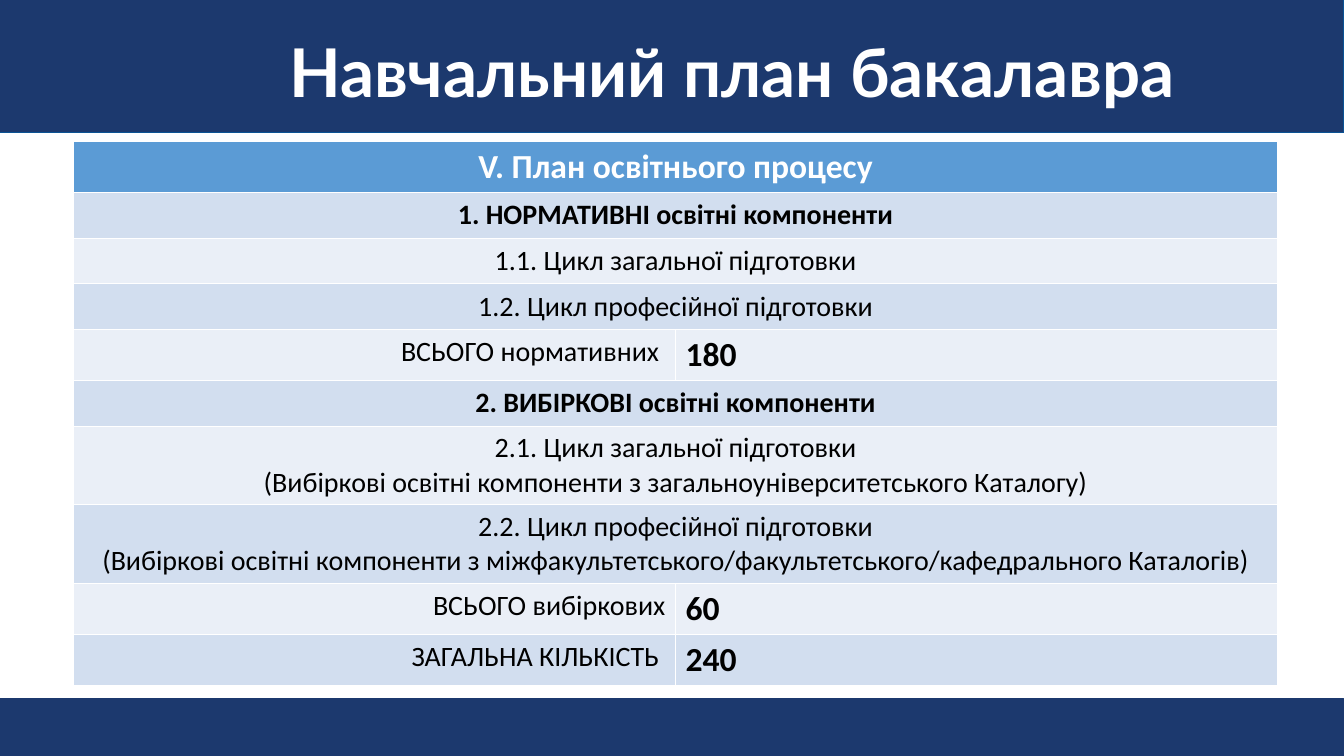
import pptx
import pptx.util
import pptx.dml.color
import pptx.enum.shapes
import pptx.enum.text
import lxml.etree

Pt = pptx.util.Pt
RGBColor = pptx.dml.color.RGBColor
ALIGN = pptx.enum.text.PP_ALIGN
ANCHOR = pptx.enum.text.MSO_ANCHOR

NAVY = RGBColor(0x1C, 0x39, 0x6E)
BAND_EDGE = RGBColor(0x0B, 0x53, 0x94)
HEADER_BLUE = RGBColor(0x5B, 0x9B, 0xD5)
ROW_TINTS = [RGBColor(0xEA, 0xEF, 0xF7), RGBColor(0xD2, 0xDE, 0xEF)]
WHITE = RGBColor(0xFF, 0xFF, 0xFF)
BLACK = RGBColor(0, 0, 0)

# Content: one-part rows span the table, two-part rows are totals
TITLE = "Навчальний план бакалавра"
HEADER = "V. План освітнього процесу"
SECTIONS = ("1. НОРМАТИВНІ освітні компоненти", "2. ВИБІРКОВІ освітні компоненти")
PLAN = [
    (HEADER,),
    (SECTIONS[0],),
    ("1.1. Цикл загальної підготовки",),
    ("1.2. Цикл професійної підготовки",),
    ("ВСЬОГО нормативних", "180"),
    (SECTIONS[1],),
    ("2.1. Цикл загальної підготовки\n"
     "(Вибіркові освітні компоненти з загальноуніверситетського Каталогу)",),
    ("2.2. Цикл професійної підготовки\n"
     "(Вибіркові освітні компоненти з "
     "міжфакультетського/факультетського/кафедрального Каталогів)",),
    ("ВСЬОГО вибіркових", "60"),
    ("ЗАГАЛЬНА КІЛЬКІСТЬ", "240"),
]
INDENTED_TOTALS = ("ВСЬОГО нормативних", "ЗАГАЛЬНА КІЛЬКІСТЬ")
BANDS = [(-1.5, 96.5, BAND_EDGE), (499, 41, NAVY)]  # top, height, edge

# Layout
SLIDE_W, SLIDE_H = 960, 540
TABLE_LEFT, TABLE_TOP, COLUMN_W = 52.6, 101, 430
ROW_H, TALL_ROW_H = 32.6, 56

presentation = pptx.Presentation()
presentation.slide_width, presentation.slide_height = Pt(SLIDE_W), Pt(SLIDE_H)
slide = presentation.slides.add_slide(presentation.slide_layouts[5])

# Navy bands behind the title
for top, height, edge in BANDS:
    band = slide.shapes.add_shape(pptx.enum.shapes.MSO_SHAPE.RECTANGLE,
                                  Pt(-2), Pt(top), Pt(SLIDE_W + 2), Pt(height))
    band.shadow.inherit = False
    band.fill.solid()
    band.fill.fore_color.rgb = NAVY
    band.line.color.rgb = edge
    band.line.width = Pt(0.75)
    slide.shapes._spTree.insert(2, band._element)

# Title
title = slide.shapes.title
title.left, title.top, title.width, title.height = Pt(76), Pt(19), Pt(894), Pt(152)
frame = title.text_frame
frame.margin_left = frame.margin_right = frame.margin_top = frame.margin_bottom = Pt(9.4)
frame.vertical_anchor = ANCHOR.TOP
frame.word_wrap = True
frame.auto_size = pptx.enum.text.MSO_AUTO_SIZE.NONE
heading = frame.paragraphs[0]
heading.text = TITLE
heading.alignment = ALIGN.CENTER
heading.line_spacing = 0.9
font = heading.font
font.name, font.size, font.bold = "Lato", Pt(48), True
font.color.rgb = WHITE

# Soft shadow under the title letters
run_properties = heading.runs[0]._r.get_or_add_rPr()
run_properties.append(lxml.etree.fromstring(
    '<a:effectLst xmlns:a="http://schemas.openxmlformats.org/drawingml/2006/main">'
    '<a:outerShdw blurRad="38100" dist="38100" dir="2700000" algn="tl">'
    '<a:srgbClr val="000000"><a:alpha val="43000"/></a:srgbClr>'
    '</a:outerShdw></a:effectLst>'))


def write(cell, text, size, bold, color, align, anchor):
    cell.vertical_anchor = anchor
    paragraph = cell.text_frame.paragraphs[0]
    paragraph.text = text
    paragraph.alignment = align
    font = paragraph.font
    font.name, font.size, font.bold = "Calibri", Pt(size), bold
    font.color.rgb = color


# Study plan table
row_heights = [TALL_ROW_H if "\n" in row[0] else ROW_H for row in PLAN]
plan = slide.shapes.add_table(len(PLAN), 2, Pt(TABLE_LEFT), Pt(TABLE_TOP),
                              Pt(2 * COLUMN_W), Pt(sum(row_heights))).table
for column in plan.columns:
    column.width = Pt(COLUMN_W)

for index, (row, height) in enumerate(zip(PLAN, row_heights)):
    plan.rows[index].height = Pt(height)
    label, value = plan.cell(index, 0), plan.cell(index, 1)
    is_header = row[0] == HEADER
    for cell in (label, value):
        cell.fill.solid()
        cell.fill.fore_color.rgb = HEADER_BLUE if is_header else ROW_TINTS[index % 2]
    if len(row) == 1:
        label.merge(value)
        write(label, row[0], 24 if is_header else 20, is_header or row[0] in SECTIONS,
              WHITE if is_header else BLACK, ALIGN.CENTER, ANCHOR.MIDDLE)
    else:
        write(label, row[0], 20, False, BLACK, ALIGN.RIGHT, ANCHOR.TOP)
        write(value, row[1], 24, True, BLACK, ALIGN.LEFT, ANCHOR.TOP)
        if row[0] in INDENTED_TOTALS:
            label.margin_right = Pt(11.7)

presentation.save("out.pptx")
